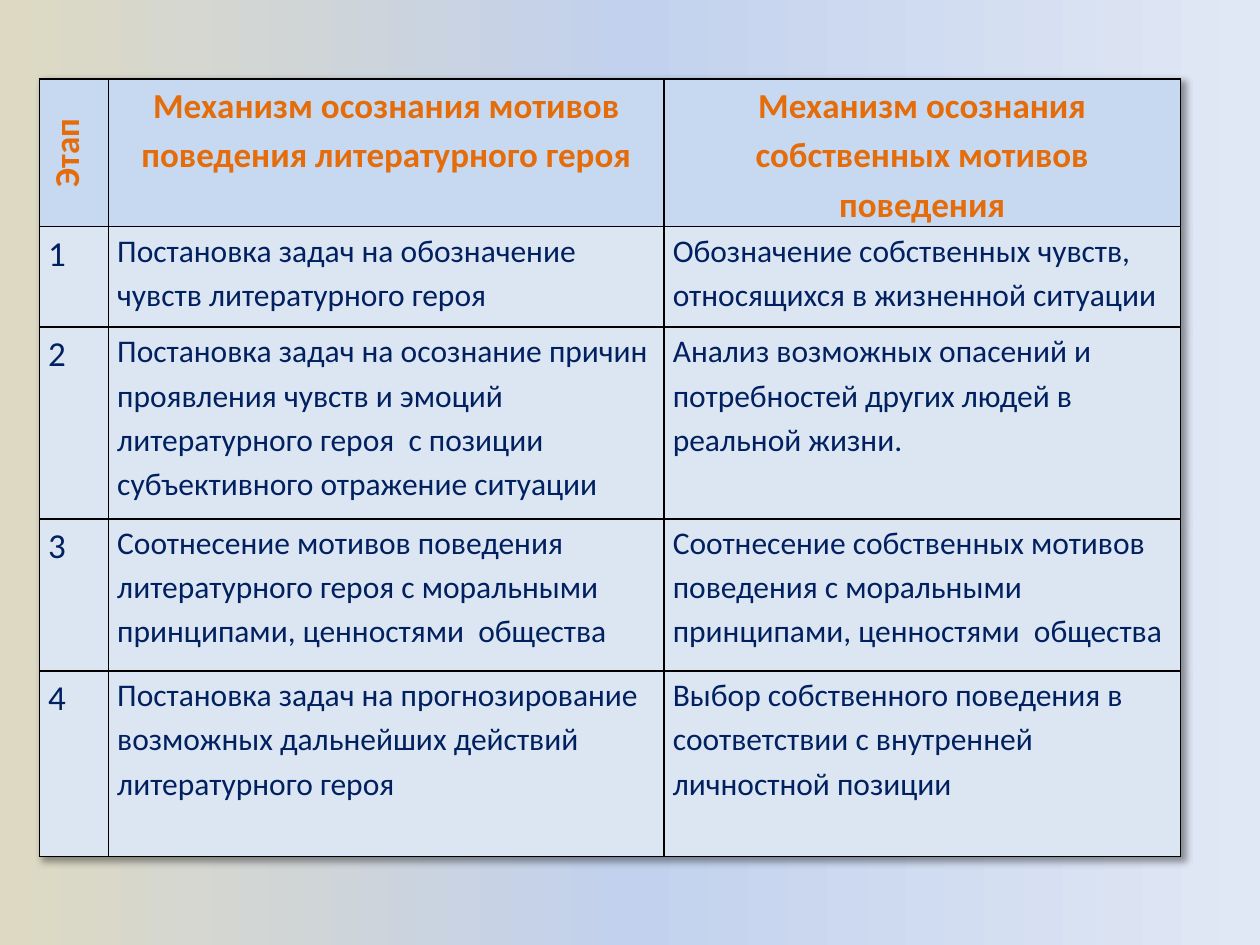
from typing import NamedTuple

from lxml.etree import SubElement as Sub
from pptx import Presentation
from pptx.dml.color import RGBColor
from pptx.enum.text import PP_ALIGN as Align
from pptx.oxml.ns import qn
from pptx.util import Pt


class Style(NamedTuple):
    size: int
    color: str
    fill: str
    bold: bool = False
    align: Align = Align.LEFT


HEAD = Style(20, "E46C0A", "C6D9F1", True, Align.CENTER)
STEP = Style(20, "002060", "DCE6F2")
BODY = STEP._replace(size=18)

LEFT, TOP = 22.5, 45
COLS = (39.5, 317.5, 295)
ROWS = (79, 57.5, 109.5, 87, 106)
STOPS = ((0, "DDD9C3"), (50, "C2D1ED"), (100, "E1E8F5"))

TEXTS = (
    ("Этап",
     "Механизм осознания мотивов поведения литературного героя",
     "Механизм осознания собственных мотивов поведения"),
    ("1",
     "Постановка задач на обозначение чувств литературного героя",
     "Обозначение собственных чувств, относящихся в жизненной ситуации"),
    ("2",
     "Постановка задач на осознание причин проявления чувств и эмоций "
     "литературного героя  с позиции субъективного отражение ситуации",
     "Анализ возможных опасений и потребностей других людей в реальной жизни."),
    ("3",
     "Соотнесение мотивов поведения литературного героя с моральными "
     "принципами, ценностями  общества",
     "Соотнесение собственных мотивов поведения с моральными принципами, "
     "ценностями  общества"),
    ("4",
     "Постановка задач на прогнозирование возможных дальнейших действий "
     "литературного героя",
     "Выбор собственного поведения в соответствии с внутренней личностной "
     "позиции"),
)


def rgb(code: str) -> RGBColor:
    return RGBColor.from_string(code)


def paint_back(slide) -> None:
    """Three-stop gradient from left to right."""
    fill = slide.background.fill
    fill.gradient()
    fill.gradient_angle = 0
    stops = slide.element.find(".//" + qn("a:gsLst"))
    for old in list(stops):
        stops.remove(old)
    for place, code in STOPS:
        stop = Sub(stops, qn("a:gs"), pos=str(place * 1000))
        Sub(stop, qn("a:srgbClr"), val=code)


def add_edges(cell) -> None:
    """Black 1 pt lines on all four sides; they must precede the fill."""
    props = cell._tc.get_or_add_tcPr()
    for spot, side in enumerate(("lnL", "lnR", "lnT", "lnB")):
        line = Sub(props, qn("a:" + side), w=str(Pt(1)))
        Sub(Sub(line, qn("a:solidFill")), qn("a:srgbClr"), val="000000")
        props.insert(spot, line)


def fill_cell(cell, text: str, style: Style) -> None:
    cell.margin_left = cell.margin_right = Pt(5)
    cell.margin_top = cell.margin_bottom = 0
    cell.fill.solid()
    cell.fill.fore_color.rgb = rgb(style.fill)
    add_edges(cell)
    cell.text = text
    para = cell.text_frame.paragraphs[0]
    para.alignment = style.align
    para.line_spacing = 1.15
    font = para.font
    font.name, font.size, font.bold = "Calibri", Pt(style.size), style.bold
    font.color.rgb = rgb(style.color)


def add_shade(table) -> None:
    """Soft shadow towards the lower right."""
    effects = Sub(table._tbl.tblPr, qn("a:effectLst"))
    table._tbl.tblPr.insert(0, effects)
    shade = Sub(effects, qn("a:outerShdw"), blurRad=str(Pt(4)),
                dist=str(Pt(3)), dir="2700000", algn="tl", rotWithShape="0")
    color = Sub(shade, qn("a:srgbClr"), val="000000")
    Sub(color, qn("a:alpha"), val="40000")


def add_grid(slide) -> None:
    frame = slide.shapes.add_table(len(ROWS), len(COLS), Pt(LEFT), Pt(TOP),
                                   Pt(sum(COLS)), Pt(sum(ROWS)))
    table = frame.table
    table.first_row = table.horz_banding = False
    for col, width in zip(table.columns, COLS):
        col.width = Pt(width)
    for row, height in zip(table.rows, ROWS):
        row.height = Pt(height)
    for r, texts in enumerate(TEXTS):
        for c, text in enumerate(texts):
            style = HEAD if r == 0 else STEP if c == 0 else BODY
            fill_cell(table.cell(r, c), text, style)
    # The stage heading reads upwards
    table.cell(0, 0)._tc.get_or_add_tcPr().set("vert", "vert270")
    add_shade(table)


def main() -> None:
    deck = Presentation()
    deck.slide_width, deck.slide_height = Pt(720), Pt(540)
    slide = deck.slides.add_slide(deck.slide_layouts[6])
    paint_back(slide)
    add_grid(slide)
    deck.save("out.pptx")


if __name__ == "__main__":
    main()
